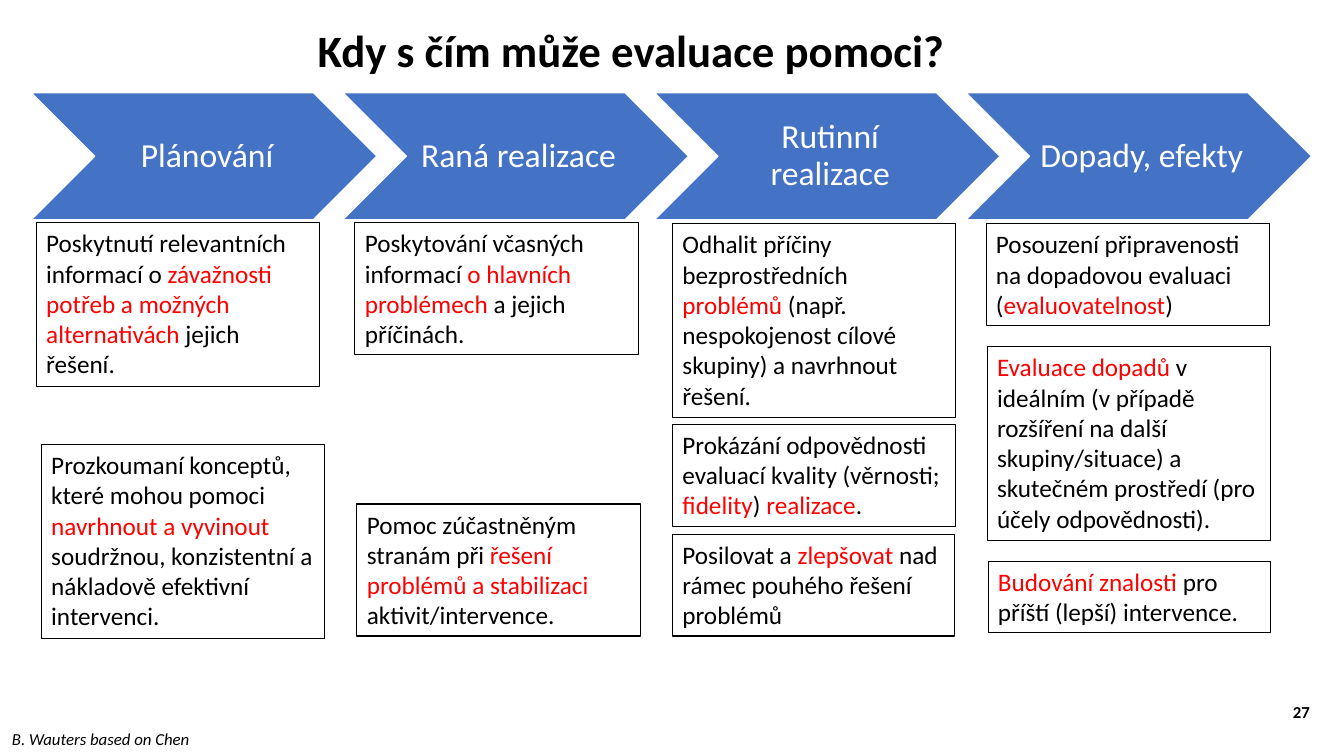
from pptx import Presentation
from pptx.dml.color import RGBColor
from pptx.enum.shapes import MSO_SHAPE
from pptx.enum.text import MSO_ANCHOR, PP_ALIGN
from pptx.util import Inches, Pt

CHEVRON = MSO_SHAPE.CHEVRON
MIDDLE = MSO_ANCHOR.MIDDLE
LEFT, CENTER, RIGHT = PP_ALIGN.LEFT, PP_ALIGN.CENTER, PP_ALIGN.RIGHT

BLACK = RGBColor(0, 0, 0)
WHITE = RGBColor(0xFF, 0xFF, 0xFF)
RED = RGBColor(0xFF, 0, 0)
BLUE = RGBColor(0x44, 0x72, 0xC4)

PHASES = ["Plánování", "Raná realizace", "Rutinní realizace", "Dopady, efekty"]

# Left, top, width, height and text; words between bars are red
ROLES = [
    (0.36, 2.21, 2.81, 1.62, "Poskytnutí relevantních informací o |závažnosti potřeb "
                             "a možných alternativách| jejich řešení."),
    (0.41, 4.41, 2.81, 1.92, "Prozkoumaní konceptů, které mohou pomoci |navrhnout a vyvinout "
                             "|soudržnou, konzistentní a nákladově efektivní intervenci."),
    (3.52, 2.21, 2.81, 1.31, "Poskytování včasných informací |o hlavních problémech "
                             "|a jejich příčinách."),
    (3.54, 5.0, 2.81, 1.31, "Pomoc zúčastněným stranám při |řešení problémů a stabilizaci "
                            "|aktivit/intervence."),
    (6.67, 2.22, 2.81, 1.92, "Odhalit příčiny bezprostředních |problémů| (např. "
                             "nespokojenost cílové skupiny) a navrhnout řešení."),
    (6.67, 4.21, 2.81, 1.01, "Prokázání odpovědnosti evaluací kvality (věrnosti; "
                             "|fidelity|) |realizace|."),
    (6.67, 5.3, 2.8, 1.01, "Posilovat a |zlepšovat |nad rámec pouhého řešení problémů"),
    (9.78, 2.22, 2.81, 1.01, "Posouzení připravenosti na dopadovou evaluaci "
                             "(|evaluovatelnost|)"),
    (9.79, 3.44, 2.81, 1.92, "|Evaluace dopadů |v ideálním (v případě rozšíření na další "
                             "skupiny/situace) a skutečném prostředí (pro účely odpovědnosti)."),
    (9.8, 5.57, 2.8, 0.71, "|Budování znalosti |pro příští (lepší) intervence."),
]


class SlideBuilder:
    def __init__(self, prs, font="Calibri"):
        self.slide = prs.slides.add_slide(prs.slide_layouts[5])
        self.font = font

    def style(self, r, size, color=BLACK, bold=False, italic=False):
        r.font.name = self.font
        r.font.size = Pt(size)
        r.font.color.rgb = color
        r.font.bold = bold
        r.font.italic = italic

    def title(self, text, x, y, w, h):
        sp = self.slide.shapes.title
        sp.left, sp.top, sp.width, sp.height = map(Inches, (x, y, w, h))
        tf = sp.text_frame
        tf.text = text
        tf.vertical_anchor = MIDDLE
        p = tf.paragraphs[0]
        p.alignment = LEFT
        p.line_spacing = 0.9
        self.style(p.runs[0], 32, bold=True)

    def chevron(self, text, x, y, w, h):
        sp = self.slide.shapes.add_shape(CHEVRON, *map(Inches, (x, y, w, h)))
        sp.shadow.inherit = False
        sp.fill.solid()
        sp.fill.fore_color.rgb = BLUE
        sp.line.color.rgb = WHITE
        sp.line.width = Pt(1)
        tf = sp.text_frame
        tf.word_wrap = True
        tf.vertical_anchor = MIDDLE
        tf.margin_left = Inches(0.1)
        tf.margin_right = tf.margin_top = tf.margin_bottom = Inches(0.04)
        tf.text = text
        p = tf.paragraphs[0]
        p.alignment = CENTER
        p.line_spacing = 0.9
        self.style(p.runs[0], 24, WHITE)

    def text(self, text, x, y, w, h, size=12, align=LEFT, **emphasis):
        sp = self.slide.shapes.add_textbox(*map(Inches, (x, y, w, h)))
        tf = sp.text_frame
        tf.word_wrap = True
        p = tf.paragraphs[0]
        p.alignment = align
        for i, part in enumerate(text.split("|")):
            if part:
                r = p.add_run()
                r.text = part
                self.style(r, size, RED if i % 2 else BLACK, **emphasis)
        return sp

    def framed_text(self, text, x, y, w, h):
        sp = self.text(text, x, y, w, h, size=18)
        sp.line.color.rgb = BLACK
        sp.line.width = Pt(0.75)


def main():
    prs = Presentation()
    prs.slide_width, prs.slide_height = Inches(13.33), Inches(7.5)
    s = SlideBuilder(prs)

    s.title("Kdy s čím může evaluace pomoci?", 3.05, 0.25, 8.19, 0.55)

    # Row of programme phases
    for i, phase in enumerate(PHASES):
        s.chevron(phase, 0.31 + 3.09 * i, 0.92, 3.43, 1.26)

    # What evaluation offers in each phase
    for x, y, w, h, role in ROLES:
        s.framed_text(role, x, y, w, h)

    # Source and slide number
    s.text("B. Wauters based on Chen", 0.02, 7.18, 5.91, 0.3, italic=True)
    number = s.text("27", 12.49, 6.86, 0.6, 0.4, align=RIGHT, bold=True)
    number.text_frame.vertical_anchor = MIDDLE

    prs.save("out.pptx")


if __name__ == "__main__":
    main()
